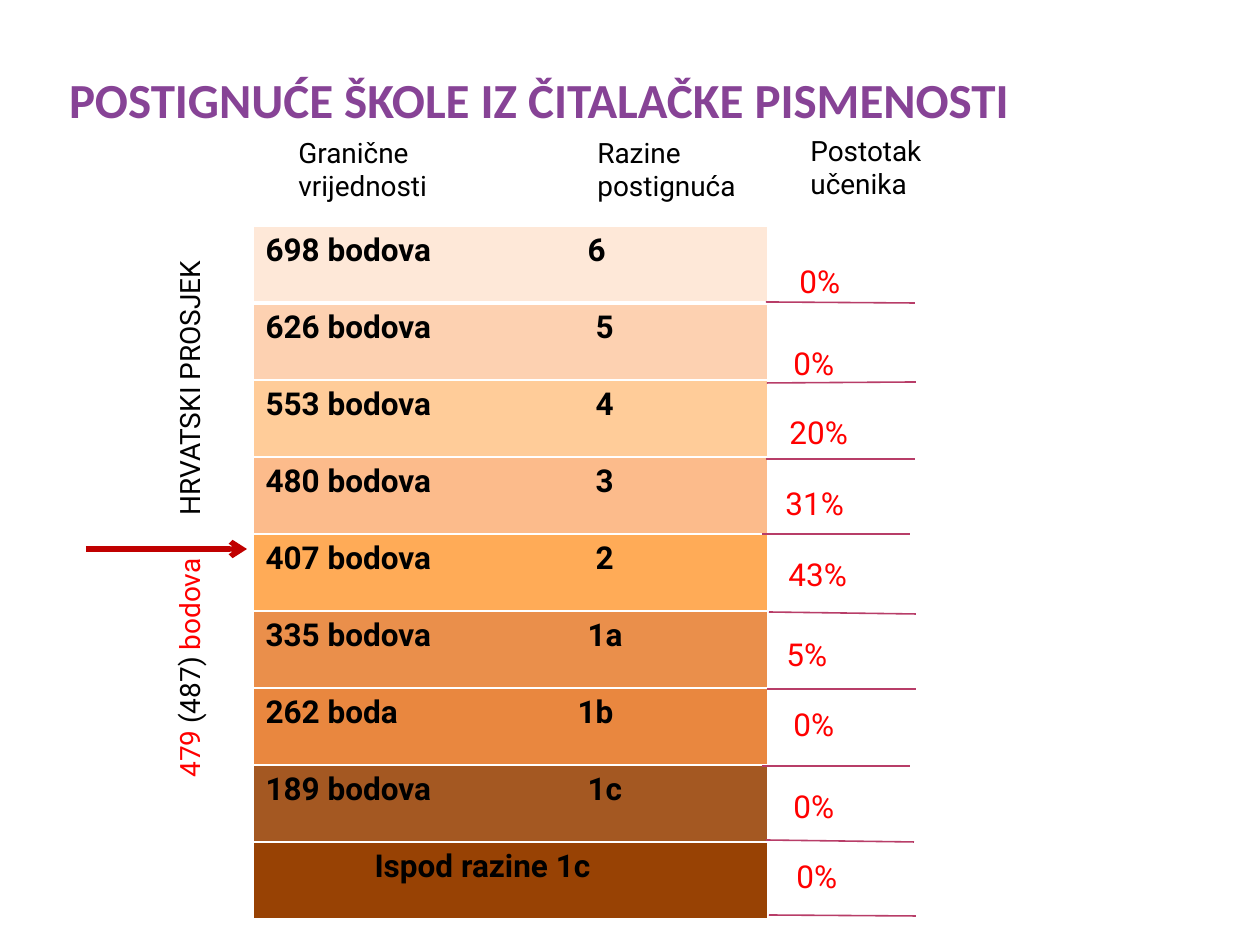
from pptx import Presentation
from pptx.dml.color import RGBColor
from pptx.enum.shapes import MSO_CONNECTOR
from pptx.enum.text import MSO_ANCHOR, MSO_AUTO_SIZE, PP_ALIGN
from pptx.oxml.ns import qn
from pptx.util import Pt
from lxml import etree

STRAIGHT = MSO_CONNECTOR.STRAIGHT
BOTTOM = MSO_ANCHOR.BOTTOM
NO_FIT = MSO_AUTO_SIZE.NONE
LEFT = PP_ALIGN.LEFT

PURPLE = RGBColor(0x87, 0x43, 0x96)
BLACK = RGBColor(0x00, 0x00, 0x00)
RED = RGBColor(0xFF, 0x00, 0x00)
PLUM = RGBColor(0xB8, 0x3D, 0x68)
DARK_RED = RGBColor(0xC0, 0x00, 0x00)
WHITE = RGBColor(0xFF, 0xFF, 0xFF)
PALE = RGBColor(0xFE, 0xE8, 0xD8)
PEACH = RGBColor(0xFD, 0xD1, 0xB1)
SAND = RGBColor(0xFF, 0xCC, 0x99)
APRICOT = RGBColor(0xFC, 0xBB, 0x8B)
AMBER = RGBColor(0xFF, 0x99, 0x33)
ORANGE = RGBColor(0xE3, 0x64, 0x06)
BROWN = RGBColor(0x98, 0x42, 0x04)

EMU_PER_PX = 914400 / 126
BODY_FONT = "Roboto"

# threshold, level, tab position of the level, fill, opacity in percent
LEVELS = [
    ("698 bodova", "6", 322, PALE, 100),
    ("626 bodova", "5", 330, PEACH, 100),
    ("553 bodova", "4", 330, SAND, 100),
    ("480 bodova", "3", 330, APRICOT, 100),
    ("407 bodova", "2", 330, AMBER, 82),
    ("335 bodova", "1a", 322, ORANGE, 72),
    ("262 boda", "1b", 312, ORANGE, 77),
    ("189 bodova", "1c", 322, BROWN, 88),
    ("Ispod razine 1c", "", 109, BROWN, 100),
]
# label, its left and top, then the rule under it: x1, y1, x2, y2
SHARES = [
    ("0%", 34, 30, 0, 76, 149, 77),
    ("0%", 28, 112, 1, 157, 150, 156),
    ("20%", 24, 181, 0, 233, 149, 233),
    ("31%", 20, 252, -4, 308, 144, 308),
    ("43%", 23, 323, 3, 386, 150, 388),
    ("5%", 21, 403, 1, 463, 150, 463),
    ("0%", 28, 473, -4, 540, 144, 540),
    ("0%", 28, 555, 0, 614, 148, 616),
    ("0%", 31, 625, 3, 689, 150, 690),
]


def px(length):
    return round(length * EMU_PER_PX)


def add_span(para, text, size, color, bold=False, font=BODY_FONT):
    span = para.add_run()
    span.text = text
    span.font.size = Pt(size)
    span.font.name = font
    span.font.bold = bold
    span.font.color.rgb = color


def add_tab(para, position):
    tabs = etree.SubElement(para._p.get_or_add_pPr(), qn("a:tabLst"))
    etree.SubElement(tabs, qn("a:tab"), pos=str(px(position)), algn="l")


def add_text(slide, left, top, width, height, spans, size, tab=None):
    box = slide.shapes.add_textbox(px(left), px(top), px(width), px(height))
    box.text_frame.word_wrap = True
    para = box.text_frame.paragraphs[0]
    if tab:
        add_tab(para, tab)
    for text, color in spans:
        add_span(para, text, size, color)
    return box


def add_line(slide, x1, y1, x2, y2, color, weight):
    line = slide.shapes.add_connector(STRAIGHT, px(x1), px(y1), px(x2), px(y2))
    line.line.color.rgb = color
    line.line.width = Pt(weight)
    etree.SubElement(line._element.spPr, qn("a:effectLst"))
    return line


def set_border(cell, side, weight):
    border = etree.SubElement(cell._tc.get_or_add_tcPr(), qn(f"a:ln{side}"), w=str(Pt(weight)))
    fill = etree.SubElement(border, qn("a:solidFill"))
    etree.SubElement(fill, qn("a:srgbClr"), val=str(WHITE))


def set_fill(cell, color, opacity):
    cell.fill.solid()
    cell.fill.fore_color.rgb = color
    if opacity < 100:
        shade = cell._tc.tcPr.find(f"{qn('a:solidFill')}/{qn('a:srgbClr')}")
        etree.SubElement(shade, qn("a:alpha"), val=str(opacity * 1000))


def add_title(slide, left, top, width, height):
    title = slide.shapes.title
    title.left, title.top, title.width, title.height = map(px, (left, top, width, height))
    frame = title.text_frame
    frame.auto_size = NO_FIT
    frame.vertical_anchor = BOTTOM
    frame.margin_left = frame.margin_right = px(6)
    frame.margin_top = frame.margin_bottom = 0
    para = frame.paragraphs[0]
    para.alignment = LEFT
    add_span(para, "POSTIGNUĆE ŠKOLE IZ ČITALAČKE PISMENOSTI", 28, PURPLE, True, "Calibri")


def add_headings(slide, left, top):
    for text, x, y, width in (("Granične vrijednosti", 0, 2, 227),
                              ("Razine postignuća", 299, 2, 168),
                              ("Postotak učenika", 512, 0, 168)):
        add_text(slide, left + x, top + y, width, 81, [(text, BLACK)], 16)


def add_levels(slide, left, top, width, row_height):
    count = len(LEVELS)
    table = slide.shapes.add_table(count, 1, px(left), px(top), px(width),
                                   px(row_height * count)).table
    table.first_row = table.horz_banding = False
    for index, (threshold, level, position, color, opacity) in enumerate(LEVELS):
        table.rows[index].height = px(row_height)
        cell = table.cell(index, 0)
        for side in "LRTB":
            thick = (index, side) in ((0, "B"), (1, "T"))
            set_border(cell, side, 3 if thick else 1)
        set_fill(cell, color, opacity)
        para = cell.text_frame.paragraphs[0]
        if level:
            add_tab(para, position)
            add_span(para, f"{threshold}\t{level}", 18, BLACK, True)
        else:
            para._p.get_or_add_pPr().set("marL", str(px(position)))
            add_span(para, threshold, 18, BLACK, True)


def add_shares(slide, left, top):
    for label, x, y, x1, y1, x2, y2 in SHARES:
        add_text(slide, left + x - 13, top + y, 120, 50, [(label, RED)], 18)
        add_line(slide, left + x1, top + y1, left + x2, top + y2, PLUM, 0.9)


def add_average(slide, left, top, width, height):
    """Place the upright average label and the arrow to the table."""
    spans = [("479 ", RED), ("(487)", BLACK), (" bodova", RED), ("\tHRVATSKI PROSJEK", BLACK)]
    # The box is laid out flat and turned about its centre.
    label = add_text(slide, left + 103 - height / 2, top + height / 2 - 23,
                     height, 46, spans, 16, tab=262)
    label.rotation = 270
    arrow = add_line(slide, left, top + 319, left + width, top + 319, DARK_RED, 3)
    etree.SubElement(arrow.line._get_or_add_ln(), qn("a:tailEnd"), type="arrow")


def main():
    deck = Presentation()
    deck.slide_width, deck.slide_height = px(1260), px(945)
    slide = deck.slides.add_slide(deck.slide_layouts[5])
    add_title(slide, 63, 44, 998, 84)
    add_headings(slide, 286, 127)
    add_levels(slide, 253, 226, 515, 77)
    add_shares(slide, 766, 226)
    add_average(slide, 86, 230, 161, 560)
    deck.save("out.pptx")


if __name__ == "__main__":
    main()
